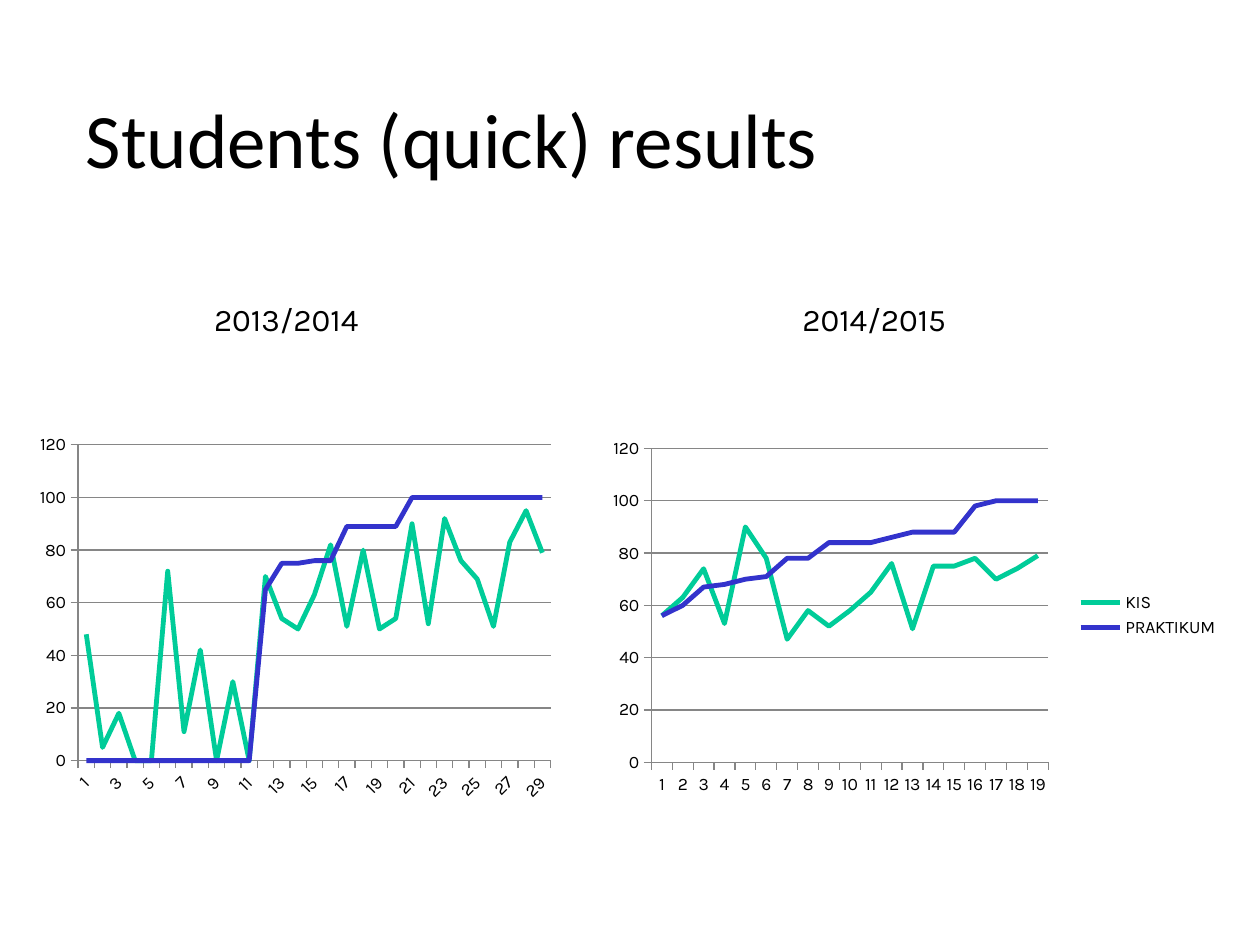
from lxml import etree
from pptx import Presentation
from pptx.chart.data import CategoryChartData as Data
from pptx.dml.color import RGBColor
from pptx.enum.chart import XL_CHART_TYPE as Kind, XL_LEGEND_POSITION as Side, XL_TICK_MARK as Tick
from pptx.enum.text import MSO_ANCHOR as Anchor, MSO_AUTO_SIZE as Fit, PP_ALIGN as Align
from pptx.oxml.ns import qn
from pptx.util import Inches, Pt

BLACK = RGBColor(0x00, 0x00, 0x00)
GRAY = RGBColor(0x86, 0x86, 0x86)
GREEN = RGBColor(0x00, 0xCC, 0x99)
BLUE = RGBColor(0x33, 0x33, 0xCC)


def style(font, name, size):
    font.name = name
    font.size = Pt(size)
    font.color.rgb = BLACK


def place(chart, plot):
    area = chart._chartSpace.find(".//" + qn("c:plotArea"))
    for old in area.findall(qn("c:layout")):
        area.remove(old)
    layout = etree.Element(qn("c:layout"))
    manual = etree.SubElement(layout, qn("c:manualLayout"))
    tags = ("layoutTarget", "xMode", "yMode", "x", "y", "w", "h")
    for tag, val in zip(tags, ("inner", "edge", "edge", *plot)):
        etree.SubElement(manual, qn("c:" + tag)).set("val", str(val))
    area.insert(0, layout)


deck = Presentation()
deck.slide_width = Inches(10)
deck.slide_height = Inches(7.5)
slide = deck.slides.add_slide(deck.slide_layouts[5])

title = slide.shapes.title
title.left, title.top = Inches(0.58), Inches(0.52)
title.width, title.height = Inches(8.92), Inches(1.15)
title.text_frame.text = "Students (quick) results"
title.text_frame.vertical_anchor = Anchor.MIDDLE
head = title.text_frame.paragraphs[0]
head.alignment = Align.LEFT
style(head.font, "Calibri", 44)

for left, year in ((1.6, "2013/2014"), (6.27, "2014/2015")):
    box = slide.shapes.add_textbox(Inches(left), Inches(2.33), Inches(1.41), Inches(0.4))
    frame = box.text_frame
    frame.word_wrap = False
    frame.auto_size = Fit.SHAPE_TO_FIT_TEXT
    frame.text = year
    style(frame.paragraphs[0].font, "Karla", 18)

late = {
    "KIS": [56, 63, 74, 53, 90, 78, 47, 58, 52, 58, 65, 76, 51, 75, 75, 78, 70, 74, 79],
    "PRAKTIKUM": [56, 60, 67, 68, 70, 71, 78, 78, 84, 84, 84, 86, 88, 88, 88, 98] + [100] * 3,
}
early = {
    "Series 1": [48, 5, 18, 0, 0, 72, 11, 42, 0, 30, 0, 70, 54, 50, 63, 82, 51, 80, 50, 54,
                 90, 52, 92, 76, 69, 51, 83, 95, 79],
    "Series 2": [0] * 11 + [65, 75, 75, 76, 76] + [89] * 4 + [100] * 9,
}
charts = (
    (4.77, 3, late, (0.08, 0.06, 0.63, 0.83), True),
    (0.17, 3.02, early, (0.09, 0.05, 0.75, 0.83), False),
)
for left, height, scores, plot, keyed in charts:
    data = Data()
    count = len(next(iter(scores.values())))
    data.categories = [str(n) for n in range(1, count + 1)]
    for name, vals in scores.items():
        data.add_series(name, vals)
    chart = slide.shapes.add_chart(
        Kind.LINE, Inches(left), Inches(3.38), Inches(5), Inches(height), data
    ).chart
    style(chart.font, "Karla", 10)
    chart.has_title = False
    chart.has_legend = keyed
    if keyed:
        chart.legend.position = Side.RIGHT
        chart.legend.include_in_layout = False
    chart.plots[0].vary_by_categories = False
    for line, color in zip(chart.plots[0].series, (GREEN, BLUE)):
        line.smooth = False
        line.format.line.width = Pt(2.75)
        line.format.line.color.rgb = color
    for axis in (chart.category_axis, chart.value_axis):
        axis.major_tick_mark = Tick.OUTSIDE
        axis.minor_tick_mark = Tick.NONE
        axis.format.line.color.rgb = GRAY
    scale = chart.value_axis
    scale.minimum_scale, scale.maximum_scale, scale.major_unit = 0, 120, 20
    scale.has_major_gridlines = True
    scale.major_gridlines.format.line.color.rgb = GRAY
    place(chart, plot)

deck.save("out.pptx")
